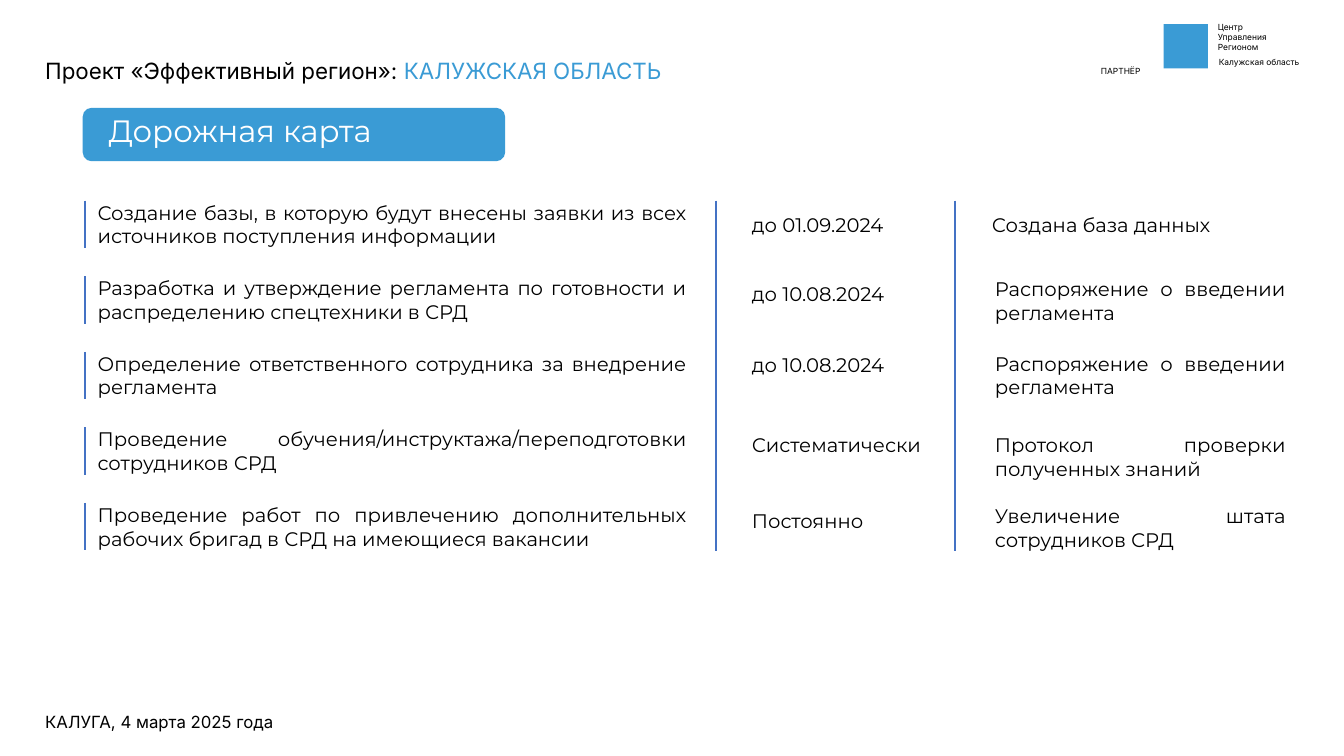
from dataclasses import dataclass

from lxml.etree import SubElement
from pptx import Presentation
from pptx.dml.color import RGBColor
from pptx.enum.shapes import MSO_CONNECTOR, MSO_SHAPE
from pptx.enum.text import MSO_AUTO_SIZE, PP_ALIGN
from pptx.oxml.ns import qn
from pptx.util import Inches, Pt


@dataclass(frozen=True)
class Theme:
    black: RGBColor = RGBColor.from_string("000000")
    white: RGBColor = RGBColor.from_string("FFFFFF")
    accent: RGBColor = RGBColor.from_string("3A9BD5")
    rule: RGBColor = RGBColor.from_string("4472C4")
    heading_font: str = "Inter"
    body_font: str = "Montserrat"
    banner_size: int = 22
    title_size: int = 16
    body_size: int = 14
    footer_size: int = 12
    emblem_size: int = 6
    rule_width: float = 1.5


class RoadmapPage:
    def __init__(self, page, theme):
        self.page = page
        self.theme = theme

    def text(self, paragraphs, left, top, width, height, *, size, font,
             color=None, align=None, spacing=None, grow=True):
        """Each paragraph is a string or a list of (text, color) spans."""
        box = self.page.shapes.add_textbox(
            Inches(left), Inches(top), Inches(width), Inches(height))
        frame = box.text_frame
        frame.word_wrap = True
        frame.auto_size = (MSO_AUTO_SIZE.SHAPE_TO_FIT_TEXT if grow
                           else MSO_AUTO_SIZE.NONE)
        color = color or self.theme.black
        for index, spans in enumerate(paragraphs):
            para = frame.add_paragraph() if index else frame.paragraphs[0]
            para.alignment = align
            para.line_spacing = spacing
            if isinstance(spans, str):
                spans = [(spans, color)]
            for words, span_color in spans:
                span = para.add_run()
                span.text = words
                span.font.name = font
                span.font.size = Pt(size)
                span.font.color.rgb = span_color
        return box

    def cell(self, words, left, top, width, height):
        self.text([words], left, top, width, height,
                  size=self.theme.body_size, font=self.theme.body_font,
                  align=PP_ALIGN.JUSTIFY)

    def block(self, kind, left, top, width, height):
        shape = self.page.shapes.add_shape(
            kind, Inches(left), Inches(top), Inches(width), Inches(height))
        shape.shadow.inherit = False
        shape.fill.solid()
        shape.fill.fore_color.rgb = self.theme.accent
        shape.line.fill.background()

    def vertical_rule(self, left, top, bottom):
        line = self.page.shapes.add_connector(
            MSO_CONNECTOR.STRAIGHT, Inches(left), Inches(top),
            Inches(left), Inches(bottom))
        line.line.color.rgb = self.theme.rule
        line.line.width = Pt(self.theme.rule_width)
        SubElement(line._element.spPr, qn("a:effectLst"))


ONE_LINE, TWO_LINES = 0.34, 0.57
FIRST_ROW, ROW_STEP = 1.94, 0.75
RULE_TOP, RULE_BOTTOM = 1.99, 5.47

# task, deadline, deadline top, result, result (left, top, width, height)
STEPS = [
    ("Создание базы, в которую будут внесены заявки из всех источников "
     "поступления информации", "до 01.09.2024", 2.06,
     "Создана база данных", (9.74, 2.06, 2.72, ONE_LINE)),
    ("Разработка и утверждение регламента по готовности и распределению "
     "спецтехники в СРД", "до 10.08.2024", 2.75,
     "Распоряжение о введении регламента", (9.77, 2.7, 3.08, TWO_LINES)),
    ("Определение ответственного сотрудника за внедрение регламента",
     "до 10.08.2024", 3.45,
     "Распоряжение о введении регламента", (9.77, 3.44, 3.08, TWO_LINES)),
    ("Проведение обучения/инструктажа/переподготовки сотрудников СРД",
     "Систематически", 4.25,
     "Протокол проверки полученных знаний", (9.77, 4.25, 3.08, TWO_LINES)),
    ("Проведение работ по привлечению дополнительных рабочих бригад в СРД "
     "на имеющиеся вакансии", "Постоянно", 5.0,
     "Увеличение штата сотрудников СРД", (9.77, 4.95, 3.08, TWO_LINES)),
]


def add_header_and_footer(roadmap):
    theme = roadmap.theme
    emblem = {"size": theme.emblem_size, "font": theme.heading_font}
    roadmap.block(MSO_SHAPE.RECTANGLE, 11.54, 0.24, 0.44, 0.44)
    roadmap.text(["Центр", "Управления", "Регионом"],
                 11.98, 0.17, 1.35, 0.4, **emblem)
    roadmap.text(["Калужская область"], 11.99, 0.52, 1.34, 0.2, **emblem)
    roadmap.text(["ПАРТНЁР"], 10.73, 0.61, 0.77, 0.2,
                 align=PP_ALIGN.CENTER, **emblem)
    roadmap.text([[("Проект «Эффективный регион»: ", theme.black),
                   ("КАЛУЖСКАЯ ОБЛАСТЬ", theme.accent)]],
                 0.35, -0.08, 6.42, 0.81, size=theme.title_size,
                 font=theme.heading_font, spacing=Pt(62))
    roadmap.text(["КАЛУГА, 4 марта 2025 года"], 0.35, 6.35, 2.56, 0.81,
                 size=theme.footer_size, font=theme.heading_font,
                 spacing=Pt(62))


def add_roadmap(roadmap):
    theme = roadmap.theme
    roadmap.block(MSO_SHAPE.ROUNDED_RECTANGLE, 0.82, 1.07, 4.19, 0.53)
    roadmap.text(["Дорожная карта"], 0.98, 1.1, 3.38, 0.53,
                 size=theme.banner_size, font=theme.body_font,
                 color=theme.white, spacing=0.9, grow=False)
    for index, (task, deadline, deadline_top, result, place) in enumerate(STEPS):
        top = FIRST_ROW + index * ROW_STEP
        roadmap.cell(task, 0.87, top, 6.04, TWO_LINES)
        roadmap.vertical_rule(0.84, top + 0.05, top + 0.52)
        roadmap.cell(deadline, 7.36, deadline_top, 1.97, ONE_LINE)
        roadmap.cell(result, *place)
    for left in (7.1, 9.47):
        roadmap.vertical_rule(left, RULE_TOP, RULE_BOTTOM)


def main():
    deck = Presentation()
    deck.slide_width = Inches(13.33)
    deck.slide_height = Inches(7.5)
    roadmap = RoadmapPage(deck.slides.add_slide(deck.slide_layouts[6]), Theme())
    add_header_and_footer(roadmap)
    add_roadmap(roadmap)
    deck.save("out.pptx")


if __name__ == "__main__":
    main()
